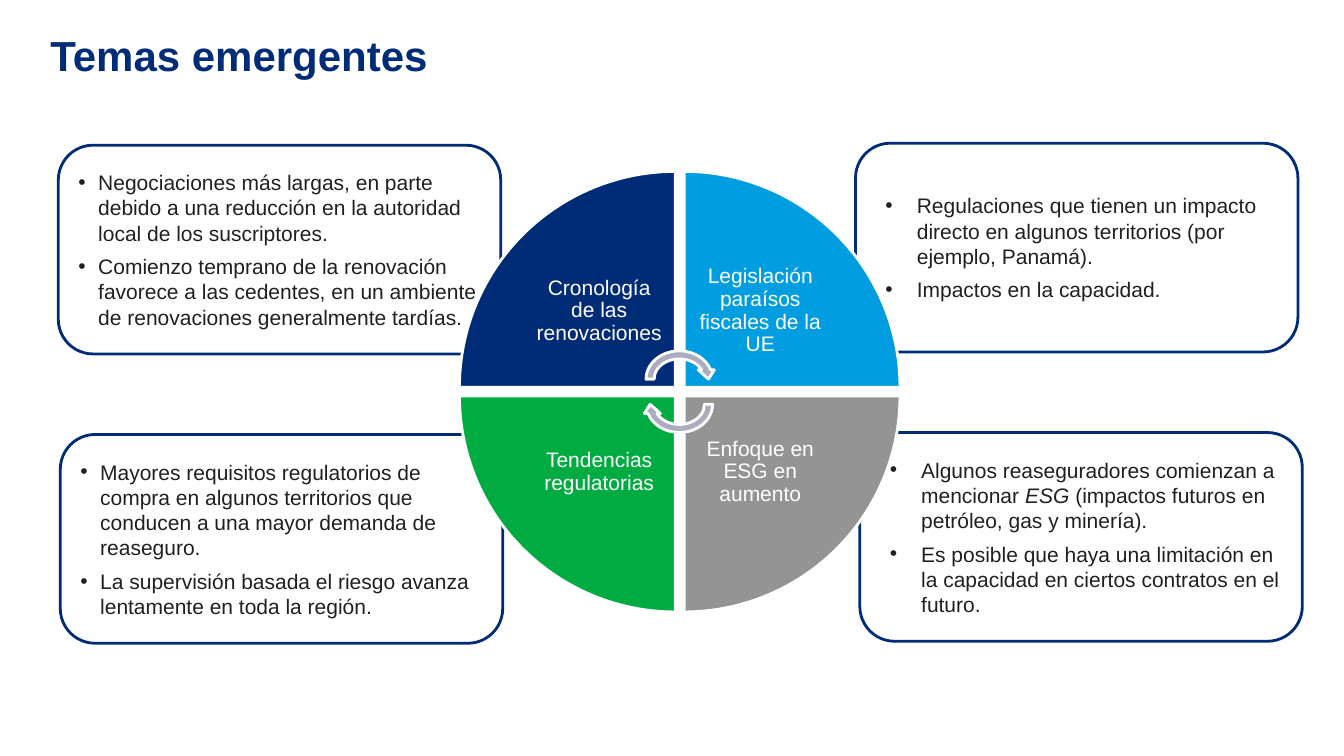
"""Build the "Temas emergentes" slide: a four-part wheel with a list beside each part."""
from lxml import etree
from pptx import Presentation
from pptx.dml.color import RGBColor
from pptx.enum.shapes import MSO_SHAPE
from pptx.enum.text import MSO_ANCHOR, MSO_AUTO_SIZE, PP_ALIGN
from pptx.oxml.ns import qn
from pptx.util import Cm, Pt

ROUNDED, WEDGE, ARROW = MSO_SHAPE.ROUNDED_RECTANGLE, MSO_SHAPE.PIE_WEDGE, MSO_SHAPE.CIRCULAR_ARROW
TOP, MIDDLE = MSO_ANCHOR.TOP, MSO_ANCHOR.MIDDLE
LEFT, CENTER = PP_ALIGN.LEFT, PP_ALIGN.CENTER
NO_FIT = MSO_AUTO_SIZE.NONE

NAVY = RGBColor(0x00, 0x2C, 0x77)
SKY = RGBColor(0x00, 0x9D, 0xE0)
GREEN = RGBColor(0x00, 0xAC, 0x41)
GRAY = RGBColor(0x94, 0x94, 0x94)
LILAC = RGBColor(0xAB, 0xAD, 0xBD)
INK = RGBColor(0x20, 0x20, 0x20)
WHITE = RGBColor(0xFF, 0xFF, 0xFF)


def apply(target, values):
    for name, value in values.items():
        setattr(target, name, value)


def add_outlined(kind, place, line_color, fill_color=None, rotation=0):
    shape = slide.shapes.add_shape(kind, *(Cm(length) for length in place))
    shape.shadow.inherit = False
    shape.rotation = rotation
    if fill_color is None:
        shape.fill.background()
    else:
        shape.fill.solid()
        shape.fill.fore_color.rgb = fill_color
    shape.line.color.rgb = line_color
    shape.line.width = Pt(2)
    return shape


prs = Presentation()
apply(prs, {"slide_width": Cm(33.87), "slide_height": Cm(19.05)})
slide = prs.slides.add_slide(prs.slide_layouts[5])

title = slide.shapes.title
apply(title, {"left": Cm(1.27), "top": Cm(0.99), "width": Cm(31.27), "height": Cm(1.37)})
title.text_frame.text = "Temas emergentes"
apply(title.text_frame, {"margin_left": 0, "margin_top": 0, "margin_right": 0, "margin_bottom": 0,
                         "vertical_anchor": TOP, "word_wrap": True, "auto_size": NO_FIT})
heading = title.text_frame.paragraphs[0]
apply(heading, {"alignment": LEFT, "line_spacing": 0.8})
apply(heading.font, {"name": "Arial", "size": Pt(30), "bold": True})
heading.font.color.rgb = NAVY

themes = [
    (1.47, 3.66, 0.25, 0.5, [
        ["Negociaciones más largas, en parte debido a una reducción en la autoridad local de los suscriptores."],
        ["Comienzo temprano de la renovación favorece a las cedentes, en un ambiente de renovaciones "
         "generalmente tardías."]]),
    (1.52, 10.95, 0.25, 0.5, [
        ["Mayores requisitos regulatorios de compra en algunos territorios que conducen a una mayor "
         "demanda de reaseguro."],
        ["La supervisión basada el riesgo avanza lentamente en toda la región."]]),
    (21.67, 10.9, 0.5, 0.79, [
        ["Algunos reaseguradores comienzan a mencionar ", "ESG", " (impactos futuros en petróleo, gas y minería)."],
        ["Es posible que haya una limitación en la capacidad en ciertos contratos en el futuro."]]),
    (21.56, 3.61, 0.5, 0.79, [
        ["Regulaciones que tienen un impacto directo en algunos territorios (por ejemplo, Panamá)."],
        ["Impactos en la capacidad."]]),
]
for left, top, margin, indent, points in themes:
    frame = add_outlined(ROUNDED, (left, top, 11.15, 5.26), NAVY).text_frame
    apply(frame, {"word_wrap": True, "vertical_anchor": MIDDLE, "margin_left": Cm(margin)})
    for number, pieces in enumerate(points):
        point = frame.add_paragraph() if number else frame.paragraphs[0]
        properties = point._p.get_or_add_pPr()
        properties.set("marL", str(Cm(indent)))
        properties.set("indent", str(-Cm(indent)))
        etree.SubElement(properties, qn("a:buFont")).set("typeface", "Arial")
        etree.SubElement(properties, qn("a:buChar")).set("char", "•")
        apply(point, {"alignment": LEFT, "space_after": Pt(0 if number else 6)})
        for piece in pieces:
            run = point.add_run()
            run.text = piece
            apply(run.font, {"name": "Arial", "size": Pt(15), "italic": piece == "ESG"})
            run.font.color.rgb = INK

WEDGE_SIZE, LABEL_SIZE = 5.44, 3.84
WHEEL_LEFT, WHEEL_TOP, WHEEL_STEP = 11.58, 4.32, 5.66
quadrants = [
    (0, 0, NAVY, "Cronología de las renovaciones"),
    (1, 0, SKY, "Legislación paraísos fiscales de la UE"),
    (1, 1, GRAY, "Enfoque en ESG en aumento"),
    (0, 1, GREEN, "Tendencias regulatorias"),
]
for turn, (column, row, color, caption) in enumerate(quadrants):
    left = WHEEL_LEFT + column * WHEEL_STEP
    top = WHEEL_TOP + row * WHEEL_STEP
    add_outlined(WEDGE, (left, top, WEDGE_SIZE, WEDGE_SIZE), WHITE, color, 90 * turn)
    label_left = left + (1 - column) * (WEDGE_SIZE - LABEL_SIZE)
    label_top = top + (1 - row) * (WEDGE_SIZE - LABEL_SIZE)
    label = slide.shapes.add_textbox(Cm(label_left), Cm(label_top), Cm(LABEL_SIZE), Cm(LABEL_SIZE)).text_frame
    apply(label, {"word_wrap": True, "vertical_anchor": MIDDLE, "margin_left": Cm(0.3),
                  "margin_right": Cm(0.3), "margin_top": Cm(0.3), "margin_bottom": Cm(0.3)})
    label.text = caption
    apply(label.paragraphs[0], {"alignment": CENTER, "line_spacing": 0.9})
    apply(label.paragraphs[0].font, {"name": "Arial", "size": Pt(15)})
    label.paragraphs[0].font.color.rgb = WHITE

for top, rotation in ((8.74, 0), (9.37, 180)):
    add_outlined(ARROW, (16.18, top, 1.88, 1.63), WHITE, LILAC, rotation)

prs.save("out.pptx")
